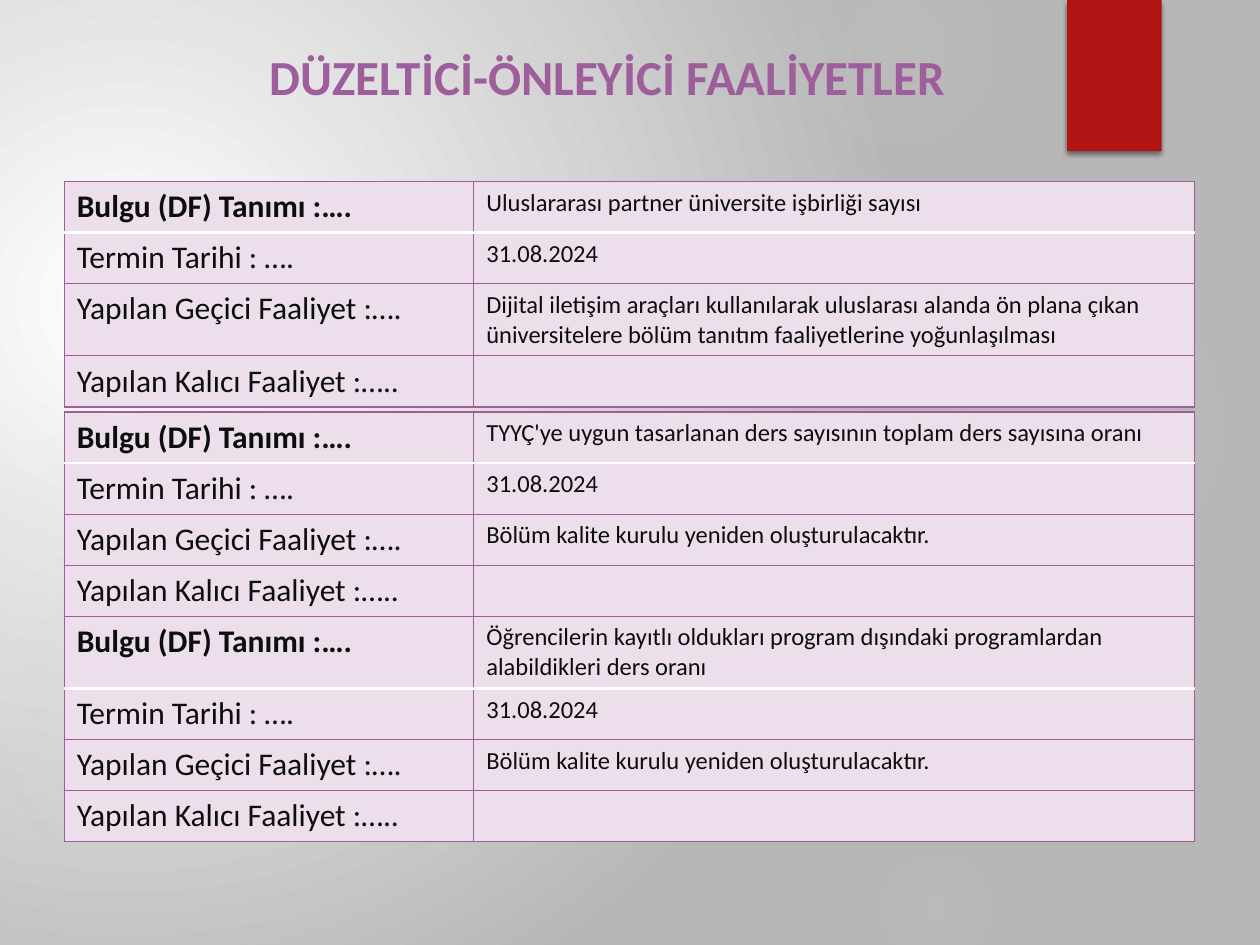
from dataclasses import dataclass

from lxml.etree import _Element
from pptx import Presentation
from pptx.dml.color import RGBColor
from pptx.enum.shapes import MSO_SHAPE
from pptx.enum.text import MSO_AUTO_SIZE, PP_ALIGN
from pptx.oxml import parse_xml
from pptx.oxml.ns import nsdecls, qn
from pptx.slide import Slide
from pptx.table import _Cell
from pptx.text.text import _Paragraph
from pptx.util import Inches, Pt

FONT = "Calibri"
PURPLE = RGBColor(0x9E, 0x5E, 0x9B)
LILAC = RGBColor(0xEC, 0xDF, 0xEB)
INK = RGBColor(0x0C, 0x0D, 0x0D)
RED = RGBColor(0xB0, 0x15, 0x13)
WHITE = RGBColor(0xFF, 0xFF, 0xFF)
GRAY = RGBColor(0xB7, 0xB7, 0xB7)
GLOW_GRAY = RGBColor(0xD9, 0xD9, 0xD9)

TABLE_LEFT = Inches(0.51)
COLUMN_WIDTHS = (Inches(3.25), Inches(5.72))
TABLE_HEIGHT = Inches(1.62)
LABELS = (
    "Bulgu (DF) Tanımı :….",
    "Termin Tarihi : ….",
    "Yapılan Geçici Faaliyet :….",
    "Yapılan Kalıcı Faaliyet :…..",
)
DEADLINE = "31.08.2024"


@dataclass
class Stop:
    position: int
    color: RGBColor
    opacity: int = 100


@dataclass
class Glow:
    left: float
    top: float
    size: float
    opacities: tuple[int, int]
    fade_end: int


@dataclass
class Finding:
    top: float
    definition: str
    temporary_action: str
    permanent_action: str = ""


GLOWS = (
    Glow(6.89, 1.83, 3.08, (7, 6), 69),
    Glow(6.22, -0.5, 1.75, (14, 7), 73),
    Glow(6.89, 6.67, 1.08, (9, 5), 66),
    Glow(-0.17, 2.92, 4.58, (11, 10), 75),
    Glow(-0.92, 3.17, 2.58, (8, 8), 72),
)
FINDINGS = (
    Finding(
        1.44,
        "Uluslararası partner üniversite işbirliği sayısı",
        "Dijital iletişim araçları kullanılarak uluslarası alanda ön plana çıkan "
        "üniversitelere bölüm tanıtım faaliyetlerine yoğunlaşılması",
    ),
    Finding(
        3.27,
        "TYYÇ'ye uygun tasarlanan ders sayısının toplam ders sayısına oranı",
        "Bölüm kalite kurulu yeniden oluşturulacaktır.",
    ),
    Finding(
        4.89,
        "Öğrencilerin kayıtlı oldukları program dışındaki programlardan "
        "alabildikleri ders oranı",
        "Bölüm kalite kurulu yeniden oluşturulacaktır.",
    ),
)


def make_gradient_circular(
    owner: _Element, stops: list[Stop], focus: tuple[int, int, int, int]
) -> None:
    """Replace the owner's gradient; focus is left, top, right, bottom in percent."""
    stop_xml = "".join(
        f'<a:gs pos="{stop.position * 1000}"><a:srgbClr val="{stop.color}">'
        f'<a:alpha val="{stop.opacity * 1000}"/></a:srgbClr></a:gs>'
        for stop in stops
    )
    sides = " ".join(f'{side}="{value * 1000}"' for side, value in zip("ltrb", focus))
    gradient = parse_xml(
        f'<a:gradFill {nsdecls("a")} rotWithShape="1"><a:gsLst>{stop_xml}</a:gsLst>'
        f'<a:path path="circle"><a:fillToRect {sides}/></a:path></a:gradFill>'
    )
    current = owner.find(".//" + qn("a:gradFill"))
    current.getparent().replace(current, gradient)


def format_runs(para: _Paragraph, size: int, color: RGBColor, bold: bool) -> None:
    for span in para.runs:
        span.font.name = FONT
        span.font.size = Pt(size)
        span.font.color.rgb = color
        span.font.bold = bold


def add_glow(slide: Slide, glow: Glow) -> None:
    size = Inches(glow.size)
    ellipse = slide.shapes.add_shape(
        MSO_SHAPE.OVAL, Inches(glow.left), Inches(glow.top), size, size
    )
    ellipse.shadow.inherit = False
    ellipse.line.fill.background()
    ellipse.fill.gradient()
    stops = [
        Stop(position, GLOW_GRAY, opacity)
        for position, opacity in zip((0, 36, glow.fade_end), (*glow.opacities, 0))
    ]
    make_gradient_circular(ellipse._element.spPr, stops, (50, 50, 50, 50))


def add_ribbon(slide: Slide) -> None:
    ribbon = slide.shapes.add_shape(
        MSO_SHAPE.RECTANGLE, Inches(8.47), 0, Inches(0.75), Inches(1.2)
    )
    ribbon.shadow.inherit = False
    ribbon.fill.solid()
    ribbon.fill.fore_color.rgb = RED
    ribbon.line.fill.background()
    ribbon._element.spPr.find(qn("a:effectLst")).append(parse_xml(
        f'<a:outerShdw {nsdecls("a")} blurRad="{Pt(3)}" dist="{Pt(2)}" dir="5400000" '
        'rotWithShape="0"><a:srgbClr val="000000"><a:alpha val="45000"/></a:srgbClr>'
        "</a:outerShdw>"
    ))


def set_border(cell: _Cell, side: str, color: RGBColor, width: float) -> None:
    cell._tc.get_or_add_tcPr().append(parse_xml(
        f'<a:ln{side} {nsdecls("a")} w="{Pt(width)}"><a:solidFill>'
        f'<a:srgbClr val="{color}"/></a:solidFill></a:ln{side}>'
    ))


def fill_cell(cell: _Cell, text: str, row: int, column: int) -> None:
    white_side = {0: "B", 1: "T"}.get(row)
    for side in "LRTB":
        if side == white_side:
            set_border(cell, side, WHITE, 1.5)
        else:
            set_border(cell, side, PURPLE, 0.75)
    cell.fill.solid()
    cell.fill.fore_color.rgb = LILAC
    if text:
        cell.text_frame.text = text
        size = 18 if column == 0 else 14
        format_runs(cell.text_frame.paragraphs[0], size, INK, row == column == 0)


def add_finding_table(slide: Slide, finding: Finding) -> None:
    values = (
        finding.definition, DEADLINE, finding.temporary_action, finding.permanent_action
    )
    table = slide.shapes.add_table(
        len(LABELS), len(COLUMN_WIDTHS), TABLE_LEFT, Inches(finding.top),
        sum(COLUMN_WIDTHS), TABLE_HEIGHT,
    ).table
    for column, width in zip(table.columns, COLUMN_WIDTHS):
        column.width = width
    for row, texts in enumerate(zip(LABELS, values)):
        for column, text in enumerate(texts):
            fill_cell(table.cell(row, column), text, row, column)


def add_title(slide: Slide) -> None:
    box = slide.shapes.add_textbox(Inches(1.34), Inches(0.37), Inches(6.96), Inches(0.53))
    box.text_frame.word_wrap = True
    box.text_frame.auto_size = MSO_AUTO_SIZE.SHAPE_TO_FIT_TEXT
    para = box.text_frame.paragraphs[0]
    para.text = "DÜZELTİCİ-ÖNLEYİCİ FAALİYETLER"
    para.alignment = PP_ALIGN.CENTER
    para.line_spacing = 0.9
    para.space_after = Pt(6)
    format_runs(para, 28, PURPLE, True)


def main() -> None:
    deck = Presentation()
    deck.slide_width, deck.slide_height = Inches(10), Inches(7.5)
    page = deck.slides.add_slide(deck.slide_layouts[6])
    page.background.fill.gradient()
    make_gradient_circular(
        page._element, [Stop(0, WHITE), Stop(100, GRAY)], (45, 65, 125, 100)
    )
    for glow in GLOWS:
        add_glow(page, glow)
    add_ribbon(page)
    for finding in FINDINGS:
        add_finding_table(page, finding)
    add_title(page)
    deck.save("out.pptx")


if __name__ == "__main__":
    main()
